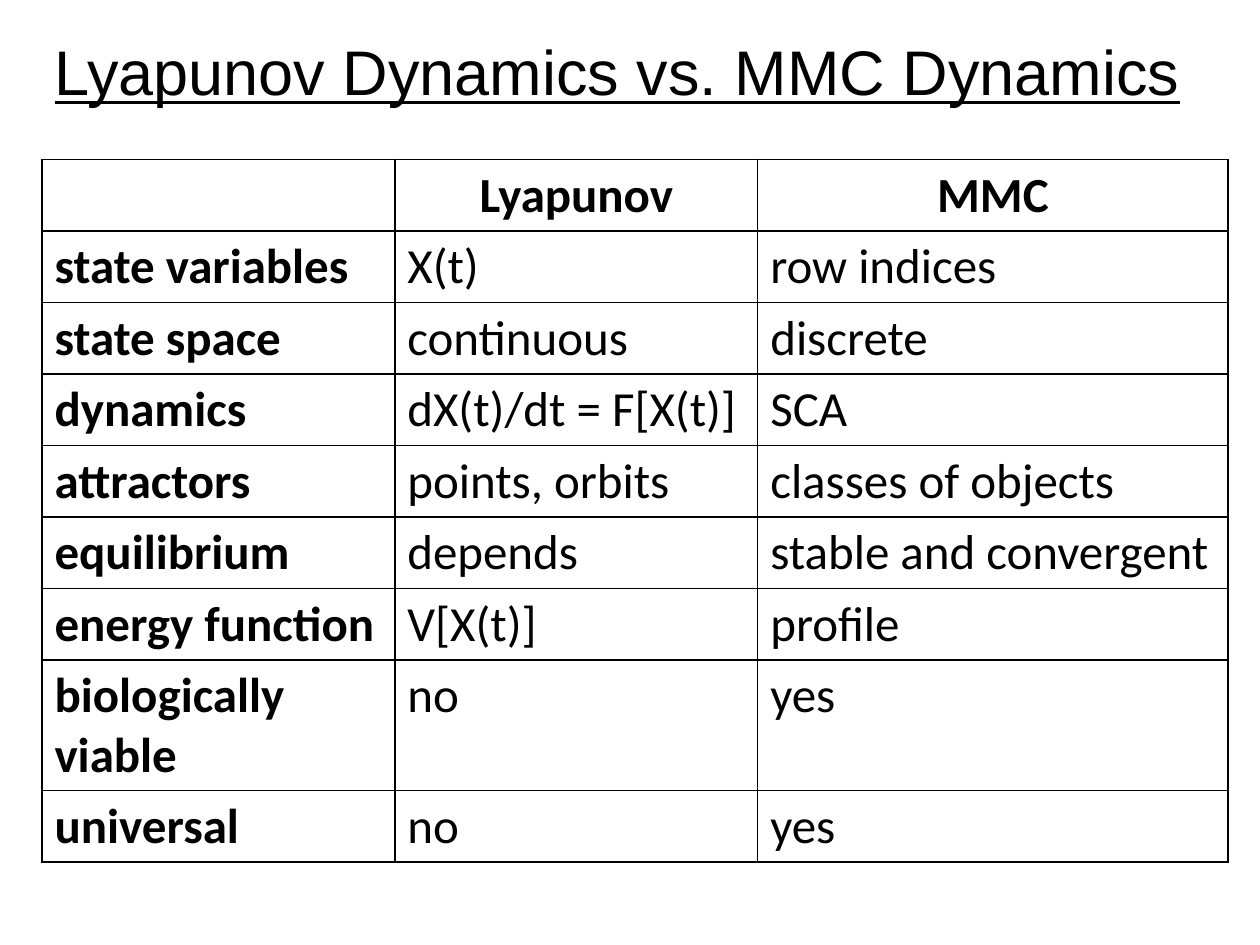
from lxml.etree import SubElement
from pptx import Presentation
from pptx.dml.color import RGBColor
from pptx.enum.text import MSO_ANCHOR, MSO_AUTO_SIZE, PP_ALIGN
from pptx.oxml.ns import qn
from pptx.util import Pt

# Content
HEADING = "Lyapunov Dynamics vs. MMC Dynamics"
COMPARISON = [
    ("", "Lyapunov", "MMC"),
    ("state variables", "X(t)", "row indices"),
    ("state space", "continuous", "discrete"),
    ("dynamics", "dX(t)/dt = F[X(t)]", "SCA"),
    ("attractors", "points, orbits", "classes of objects"),
    ("equilibrium", "depends", "stable and convergent"),
    ("energy function", "V[X(t)]", "profile"),
    ("biologically viable", "no", "yes"),
    ("universal", "no", "yes"),
]

# Layout in points
LEFT = 24
COLUMN_WIDTHS = (201.6, 207.4, 268.8)
ROW_HEIGHT = 29.5
BLACK = "000000"


def color(hex_code):
    return RGBColor.from_string(hex_code)


def write(frame, text, font="Calibri", size=28, bold=False, underline=False,
          align=PP_ALIGN.LEFT):
    paragraph = frame.paragraphs[0]
    paragraph.alignment = align
    run = paragraph.add_run()
    run.text = text
    run.font.name = font
    run.font.size = Pt(size)
    run.font.bold = bold
    run.font.underline = underline
    run.font.color.rgb = color(BLACK)


def add_borders(cell, hex_code=BLACK, width=1):
    properties = cell._tc.get_or_add_tcPr()
    for side in ("a:lnL", "a:lnR", "a:lnT", "a:lnB"):
        border = SubElement(properties, qn(side), w=str(Pt(width)))
        fill = SubElement(border, qn("a:solidFill"))
        SubElement(fill, qn("a:srgbClr"), val=hex_code)


presentation = Presentation()
presentation.slide_width, presentation.slide_height = Pt(720), Pt(540)
slide = presentation.slides.add_slide(presentation.slide_layouts[5])

# Title
heading = slide.shapes.title
heading.left, heading.top = Pt(LEFT), Pt(15)
heading.width, heading.height = Pt(672), Pt(51)
heading.text_frame.vertical_anchor = MSO_ANCHOR.TOP
heading.text_frame.word_wrap = True
heading.text_frame.auto_size = MSO_AUTO_SIZE.SHAPE_TO_FIT_TEXT
write(heading.text_frame, HEADING, font="Arial", size=36, underline=True)

# Comparison table
comparison = slide.shapes.add_table(
    len(COMPARISON), len(COLUMN_WIDTHS), Pt(LEFT), Pt(91.2),
    Pt(sum(COLUMN_WIDTHS)), Pt(ROW_HEIGHT * len(COMPARISON))).table
comparison.horz_banding = False
comparison.first_row = False
for column, width in zip(comparison.columns, COLUMN_WIDTHS):
    column.width = Pt(width)
for row_index, entries in enumerate(COMPARISON):
    comparison.rows[row_index].height = Pt(ROW_HEIGHT)
    is_header = row_index == 0
    for column_index, entry in enumerate(entries):
        cell = comparison.cell(row_index, column_index)
        add_borders(cell)
        cell.fill.background()
        write(cell.text_frame, entry, bold=is_header or column_index == 0,
              align=PP_ALIGN.CENTER if is_header else PP_ALIGN.LEFT)

presentation.save("out.pptx")
